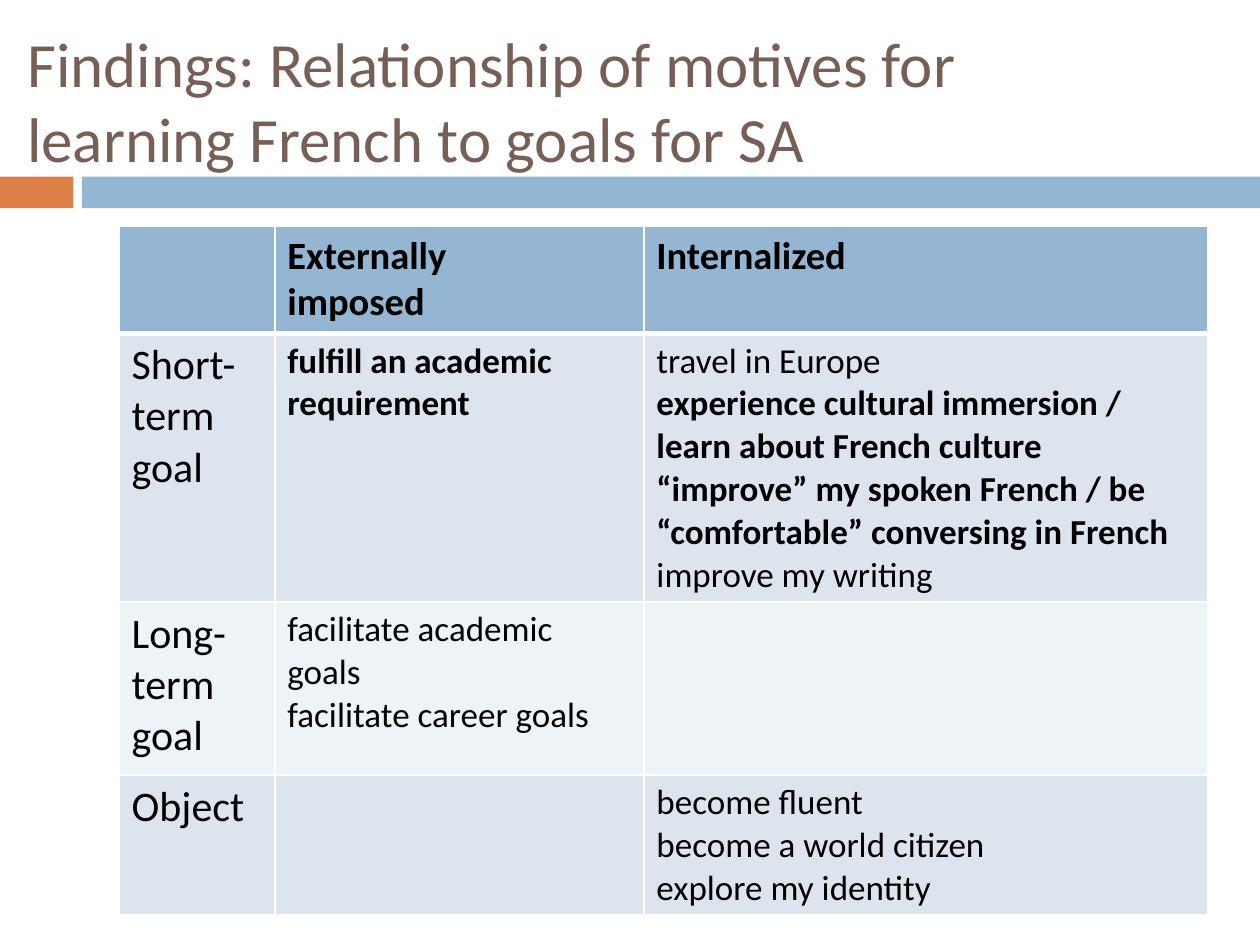
from lxml import etree
from pptx import Presentation
from pptx.dml.color import RGBColor
from pptx.enum import shapes, text
from pptx.oxml import ns
from pptx.util import Cm, Pt

FONT = "Calibri"
ORANGE, BLUE, BROWN = "DD8047", "94B6D2", "775F55"
BLACK, WHITE = "000000", "FFFFFF"
ROW_FILLS = [BLUE, "DCE5EE", "EEF3F7", "DCE5EE"]
COLUMN_WIDTHS = [3.14, 7.44, 11.37]
ROW_HEIGHTS = [2.16, 5.42, 3.48, 2.82]
HEADER_SIZE, LABEL_SIZE, BODY_SIZE = 22, 24, 20

ROWS = [
    [[], [("Externally", True), ("imposed", True)], [("Internalized", True)]],
    [
        [("Short-term goal", False)],
        [("fulfill an academic requirement", True)],
        [
            ("travel in Europe", False),
            ("experience cultural immersion / learn about French culture", True),
            ("“improve” my spoken French / be “comfortable” conversing in French", True),
            ("improve my writing", False),
        ],
    ],
    [
        [("Long-term", False), ("goal", False)],
        [("facilitate academic goals", False), ("facilitate career goals", False)],
        [],
    ],
    [
        [("Object", False)],
        [],
        [
            ("become fluent", False),
            ("become a world citizen", False),
            ("explore my identity", False),
        ],
    ],
]


def color(value):
    return RGBColor.from_string(value)


def style_paragraph(para, size, value, bold=False):
    for span in para.runs:
        span.font.name = FONT
        span.font.size = Pt(size)
        span.font.bold = bold
        span.font.color.rgb = color(value)


def add_bar(page, left, top, width, height, value):
    bar = page.shapes.add_shape(
        shapes.MSO_SHAPE.RECTANGLE, Cm(left), Cm(top), Cm(width), Cm(height)
    )
    bar.shadow.inherit = False
    bar.fill.solid()
    bar.fill.fore_color.rgb = color(value)
    bar.line.fill.background()


def add_divider(page, left, top, width, height):
    accent_width, gap = 1.48, 0.17
    start = accent_width + gap
    add_bar(page, left, top, accent_width, height, ORANGE)
    add_bar(page, left + start, top, width - start, height, BLUE)


def add_title(page, left, top, width, height):
    box = page.shapes.add_textbox(Cm(left), Cm(top), Cm(width), Cm(height))
    frame = box.text_frame
    frame.word_wrap = True
    frame.vertical_anchor = text.MSO_ANCHOR.MIDDLE
    frame.text = "Findings: Relationship of motives for \vlearning French to goals for SA"
    style_paragraph(frame.paragraphs[0], 36, BROWN)


def set_borders(cell, bottom_width, top_width):
    properties = cell._tc.get_or_add_tcPr()
    widths = {"lnL": 1, "lnR": 1, "lnT": top_width, "lnB": bottom_width}
    for side, width in widths.items():
        line = etree.SubElement(properties, ns.qn(f"a:{side}"), w=str(Pt(width)))
        fill = etree.SubElement(line, ns.qn("a:solidFill"))
        etree.SubElement(fill, ns.qn("a:srgbClr"), val=WHITE)


def fill_cell(cell, entries, row, column):
    set_borders(cell, 3 if row == 0 else 1, 3 if row == 1 else 1)
    cell.fill.solid()
    cell.fill.fore_color.rgb = color(ROW_FILLS[row])
    size = HEADER_SIZE if row == 0 else LABEL_SIZE if column == 0 else BODY_SIZE
    cell.text_frame.text = "\n".join(wording for wording, bold in entries)
    for para, (wording, bold) in zip(cell.text_frame.paragraphs, entries):
        style_paragraph(para, size, BLACK, bold)


def add_goal_table(page, left, top):
    frame = page.shapes.add_table(
        len(ROWS), len(COLUMN_WIDTHS), Cm(left), Cm(top),
        Cm(sum(COLUMN_WIDTHS)), Cm(sum(ROW_HEIGHTS)),
    )
    table = frame.table
    for column, width in zip(table.columns, COLUMN_WIDTHS):
        column.width = Cm(width)
    for row, height in zip(table.rows, ROW_HEIGHTS):
        row.height = Cm(height)
    for row, cells in enumerate(ROWS):
        for column, entries in enumerate(cells):
            fill_cell(table.cell(row, column), entries, row, column)


def main():
    deck = Presentation()
    deck.slide_width, deck.slide_height = Cm(25.4), Cm(19.05)
    page = deck.slides.add_slide(deck.slide_layouts[6])
    add_divider(page, 0, 3.56, 25.4, 0.64)
    add_title(page, 0.3, 0.64, 24.05, 2.74)
    add_goal_table(page, 2.4, 4.56)
    deck.save("out.pptx")


if __name__ == "__main__":
    main()
